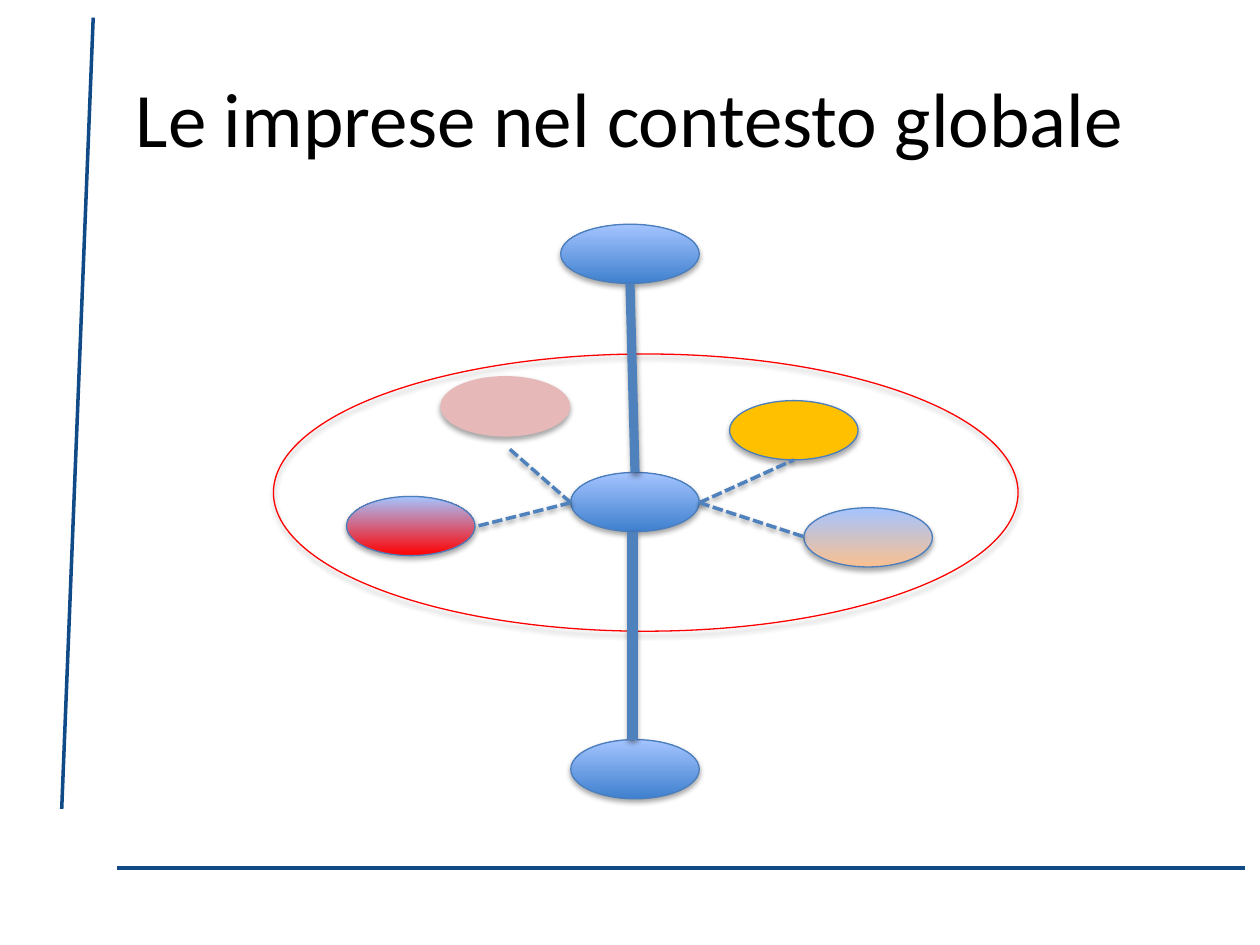
from lxml.etree import SubElement
from pptx import Presentation
from pptx.dml.color import RGBColor
from pptx.enum.dml import MSO_LINE
from pptx.enum.shapes import MSO_CONNECTOR, MSO_SHAPE
from pptx.enum.text import MSO_ANCHOR, PP_ALIGN
from pptx.oxml.ns import qn
from pptx.util import Inches, Pt

TITLE = "Le imprese nel contesto globale"
FRAME, EDGE, LINK = "104B87", "4B7EBC", "4F81BD"
LIGHT = "A4C4FF"
BLUE = ("3F80CE", LIGHT)
NODE_W, NODE_H = 1.02, 0.47

FRAME_LINES = [((0.74, 0.14), (0.49, 6.42)), ((9.88, 6.89), (0.93, 6.89))]
ORBIT = (2.17, 2.81, 5.91, 2.2)
# left, top, width, fill (one colour, or bottom and top colours), outline
NODES = [
    (4.45, 1.78, 1.1, BLUE, EDGE),
    (4.53, 3.75, NODE_W, BLUE, EDGE),
    (4.53, 5.87, NODE_W, BLUE, EDGE),
    (3.5, 2.99, NODE_W, "E6B9B8", "E6B9B8"),
    (5.79, 3.18, NODE_W, "FFC000", EDGE),
    (6.38, 4.03, NODE_W, ("FAC090", LIGHT), EDGE),
    (2.75, 3.94, NODE_W, ("FF0000", LIGHT), EDGE),
]
AXES = [((5, 2.25), (5.04, 3.75), 5.25), ((5.02, 4.22), (5.02, 5.87), 5.75)]
HUB_LEFT, HUB_RIGHT = (4.53, 3.99), (5.55, 3.99)
SPOKES = [
    (HUB_RIGHT, (6.3, 3.65)),
    (HUB_RIGHT, (6.38, 4.26)),
    (HUB_LEFT, (4.04, 3.56)),
    (HUB_LEFT, (3.77, 4.18)),
]


def rgb(value):
    return RGBColor.from_string(value)


def set_effects(sp_pr, alpha=None, dist=1.8):
    """Replace inherited effects with a downward shadow, or with none."""
    effects = SubElement(sp_pr, qn("a:effectLst"))
    if alpha:
        shadow = SubElement(effects, qn("a:outerShdw"), blurRad=str(Pt(3.1)),
                            dist=str(Pt(dist)), dir="5400000", rotWithShape="0")
        color = SubElement(shadow, qn("a:srgbClr"), val="000000")
        SubElement(color, qn("a:alpha"), val=str(alpha * 1000))


def add_text(s, text, box, size, font="Calibri", color="000000"):
    tf = s.shapes.add_textbox(*map(Inches, box)).text_frame
    tf.word_wrap = True
    tf.vertical_anchor = MSO_ANCHOR.MIDDLE
    p = tf.paragraphs[0]
    p.alignment = PP_ALIGN.CENTER
    r = p.add_run()
    r.text = text
    r.font.size, r.font.name = Pt(size), font
    r.font.color.rgb = rgb(color)


def add_ellipse(s, box, fill, outline):
    sp = s.shapes.add_shape(MSO_SHAPE.OVAL, *map(Inches, box))
    if fill is None:
        sp.fill.background()
    elif isinstance(fill, str):
        sp.fill.solid()
        sp.fill.fore_color.rgb = rgb(fill)
    else:
        sp.fill.gradient()
        sp.fill.gradient_angle = 90
        for stop, color in zip(sp.fill.gradient_stops, fill):
            stop.color.rgb = rgb(color)
    sp.line.color.rgb = rgb(outline)
    sp.line.width = Pt(0.75)
    set_effects(sp.element.spPr, alpha=35)


def add_line(s, start, end, color, width, dash=None, alpha=None):
    line = s.shapes.add_connector(MSO_CONNECTOR.STRAIGHT, *map(Inches, start + end))
    line.line.color.rgb = rgb(color)
    line.line.width = Pt(width)
    if dash:
        line.line.dash_style = dash
    set_effects(line.element.spPr, alpha, dist=1.6)


def main():
    prs = Presentation()
    prs.slide_width, prs.slide_height = Inches(10), Inches(7.5)
    s = prs.slides.add_slide(prs.slide_layouts[6])

    for start, end in FRAME_LINES:
        add_line(s, start, end, FRAME, 2)
    add_text(s, TITLE, (0.5, 0.3, 9, 1.25), size=44)
    add_ellipse(s, ORBIT, None, "FF0000")
    for left, top, width, fill, outline in NODES:
        add_ellipse(s, (left, top, width, NODE_H), fill, outline)
    for start, end, width in AXES:
        add_line(s, start, end, LINK, width, alpha=38)
    for start, end in SPOKES:
        add_line(s, start, end, LINK, 2, dash=MSO_LINE.SQUARE_DOT, alpha=38)

    prs.save("out.pptx")


if __name__ == "__main__":
    main()
